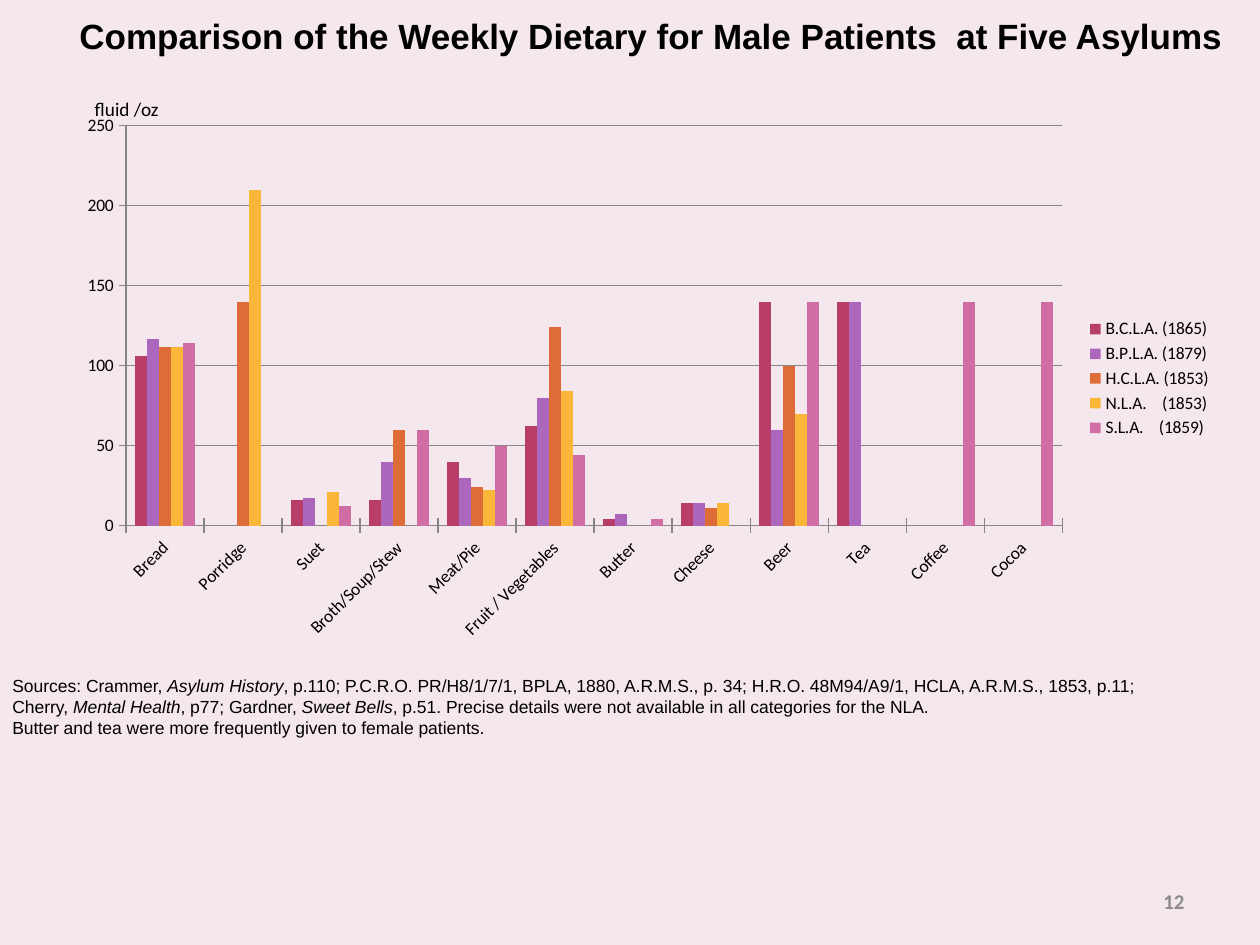
"""Build a slide comparing weekly diets for male patients at five asylums."""
from typing import NamedTuple, Optional

from lxml import etree
from pptx import Presentation
from pptx.chart.data import CategoryChartData
from pptx.dml.color import RGBColor
from pptx.enum import chart as ch, text as t
from pptx.oxml import ns
from pptx.util import Cm, Pt

BACKGROUND = RGBColor(0xF4, 0xE7, 0xED)
BLACK = RGBColor(0, 0, 0)
GRAY = RGBColor(0x8C, 0x8C, 0x8C)
LINE = RGBColor(0x86, 0x86, 0x86)


class Box(NamedTuple):
    left: float
    top: float
    width: float
    height: float


class Asylum(NamedTuple):
    name: str
    values: tuple[Optional[int], ...]
    color: RGBColor


FOODS = ("Bread", "Porridge", "Suet", "Broth/Soup/Stew", "Meat/Pie",
         "Fruit / Vegetables", "Butter", "Cheese", "Beer", "Tea", "Coffee", "Cocoa")
ASYLUMS = (
    Asylum("B.C.L.A. (1865)", (106, None, 16, 16, 40, 62, 4, 14, 140, 140, None, None),
           RGBColor(0xB8, 0x3D, 0x68)),
    Asylum("B.P.L.A. (1879)", (117, None, 17, 40, 30, 80, 7, 14, 60, 140, None, None),
           RGBColor(0xAC, 0x66, 0xBB)),
    Asylum("H.C.L.A. (1853)", (112, 140, None, 60, 24, 124, None, 11, 100, None, None, None),
           RGBColor(0xDE, 0x6C, 0x36)),
    Asylum("N.L.A.    (1853)", (112, 210, 21, None, 22, 84, None, 14, 70, None, None, None),
           RGBColor(0xF9, 0xB6, 0x39)),
    Asylum("S.L.A.    (1859)", (114, None, 12, 60, 50, 44, 4, None, 140, None, 140, 140),
           RGBColor(0xCF, 0x6D, 0xA4)),
)
PLOT = {"x": 0.053, "y": 0.037, "w": 0.807, "h": 0.733}
SOURCES = (
    ("Sources: Crammer, ", "Asylum History",
     ", p.110; P.C.R.O. PR/H8/1/7/1, BPLA, 1880, A.R.M.S., p. 34; "
     "H.R.O. 48M94/A9/1, HCLA, A.R.M.S., 1853, p.11;"),
    ("Cherry, ", "Mental Health", ", p77; Gardner, ", "Sweet Bells",
     ", p.51. Precise details were not available in all categories for the NLA."),
    ("Butter and tea were more frequently given to female patients.",),
)


def place(sp, box: Box) -> None:
    """Move and size a shape in centimetres."""
    sp.left, sp.top, sp.width, sp.height = map(Cm, box)


def write(sp, lines, *, size: float, font: str = "Arial", color: RGBColor = BLACK,
          bold: bool = False, align=t.PP_ALIGN.LEFT, anchor=t.MSO_ANCHOR.MIDDLE) -> None:
    """Fill a shape with lines whose every second run is italic."""
    tf = sp.text_frame
    tf.word_wrap, tf.auto_size, tf.vertical_anchor = True, t.MSO_AUTO_SIZE.NONE, anchor
    for i, line in enumerate(lines):
        p = tf.add_paragraph() if i else tf.paragraphs[0]
        p.alignment = align
        for j, part in enumerate(line):
            r = p.add_run()
            r.text = part
            r.font.name, r.font.size, r.font.bold = font, Pt(size), bold
            r.font.italic = j % 2 == 1
            r.font.color.rgb = color


def add_text(s, box: Box, lines, **style) -> None:
    """Add a formatted text box."""
    write(s.shapes.add_textbox(*map(Cm, box)), lines, **style)


def set_plot_area(chart) -> None:
    """Fix the inner plot area as fractions of the chart."""
    area = chart._chartSpace.chart.plotArea
    for old in area.findall(ns.qn("c:layout")):
        area.remove(old)
    layout = etree.Element(ns.qn("c:layout"))
    manual = etree.SubElement(layout, ns.qn("c:manualLayout"))
    settings = {"layoutTarget": "inner", "xMode": "edge", "yMode": "edge", **PLOT}
    for tag, value in settings.items():
        etree.SubElement(manual, ns.qn(f"c:{tag}")).set("val", str(value))
    area.insert(0, layout)


def add_diet_chart(s, box: Box) -> None:
    """Add the clustered columns of food by asylum."""
    data = CategoryChartData()
    data.categories = FOODS
    for asylum in ASYLUMS:
        data.add_series(asylum.name, asylum.values)
    chart = s.shapes.add_chart(ch.XL_CHART_TYPE.COLUMN_CLUSTERED, *map(Cm, box), data).chart
    chart.has_title = False
    chart.font.name, chart.font.size = "Calibri", Pt(10)
    chart.font.color.rgb = BLACK
    chart.has_legend = True
    chart.legend.position = ch.XL_LEGEND_POSITION.RIGHT
    chart.legend.include_in_layout = False
    plot = chart.plots[0]
    plot.gap_width, plot.overlap, plot.vary_by_categories = 150, 0, False
    for series, asylum in zip(plot.series, ASYLUMS):
        series.format.fill.solid()
        series.format.fill.fore_color.rgb = asylum.color
        series.invert_if_negative = False
    for axis in (chart.category_axis, chart.value_axis):
        axis.major_tick_mark = ch.XL_TICK_MARK.CROSS
        axis.format.line.color.rgb = LINE
        axis.tick_labels.font.size = Pt(10)
    labels = chart.category_axis._element.find(ns.qn("c:txPr"))
    labels.find(ns.qn("a:bodyPr")).set("rot", "-2700000")
    value = chart.value_axis
    value.minimum_scale, value.maximum_scale, value.major_unit = 0, 250, 50
    value.has_major_gridlines = True
    value.major_gridlines.format.line.color.rgb = LINE
    set_plot_area(chart)


def main() -> None:
    """Assemble and save the slide."""
    prs = Presentation()
    prs.slide_width, prs.slide_height = Cm(25.4), Cm(19.05)
    s = prs.slides.add_slide(prs.slide_layouts[5])
    s.background.fill.solid()
    s.background.fill.fore_color.rgb = BACKGROUND
    title = s.shapes.title
    place(title, Box(0.86, 0, 24.54, 1.45))
    write(title, [("Comparison of the Weekly Dietary for Male Patients  at Five Asylums",)],
          size=20, bold=True, align=t.PP_ALIGN.CENTER)
    add_diet_chart(s, Box(1.3, 2.13, 23.39, 11))
    add_text(s, Box(1.66, 1.82, 3, 0.76), [("fluid /oz",)], size=11, font="Calibri")
    add_text(s, Box(0, 13.49, 25.4, 1.55), SOURCES, size=10, anchor=t.MSO_ANCHOR.TOP)
    add_text(s, Box(18.21, 17.65, 5.92, 1.02), [("12",)], size=12, font="Calibri",
             color=GRAY, bold=True, align=t.PP_ALIGN.RIGHT)
    prs.save("out.pptx")


if __name__ == "__main__":
    main()
